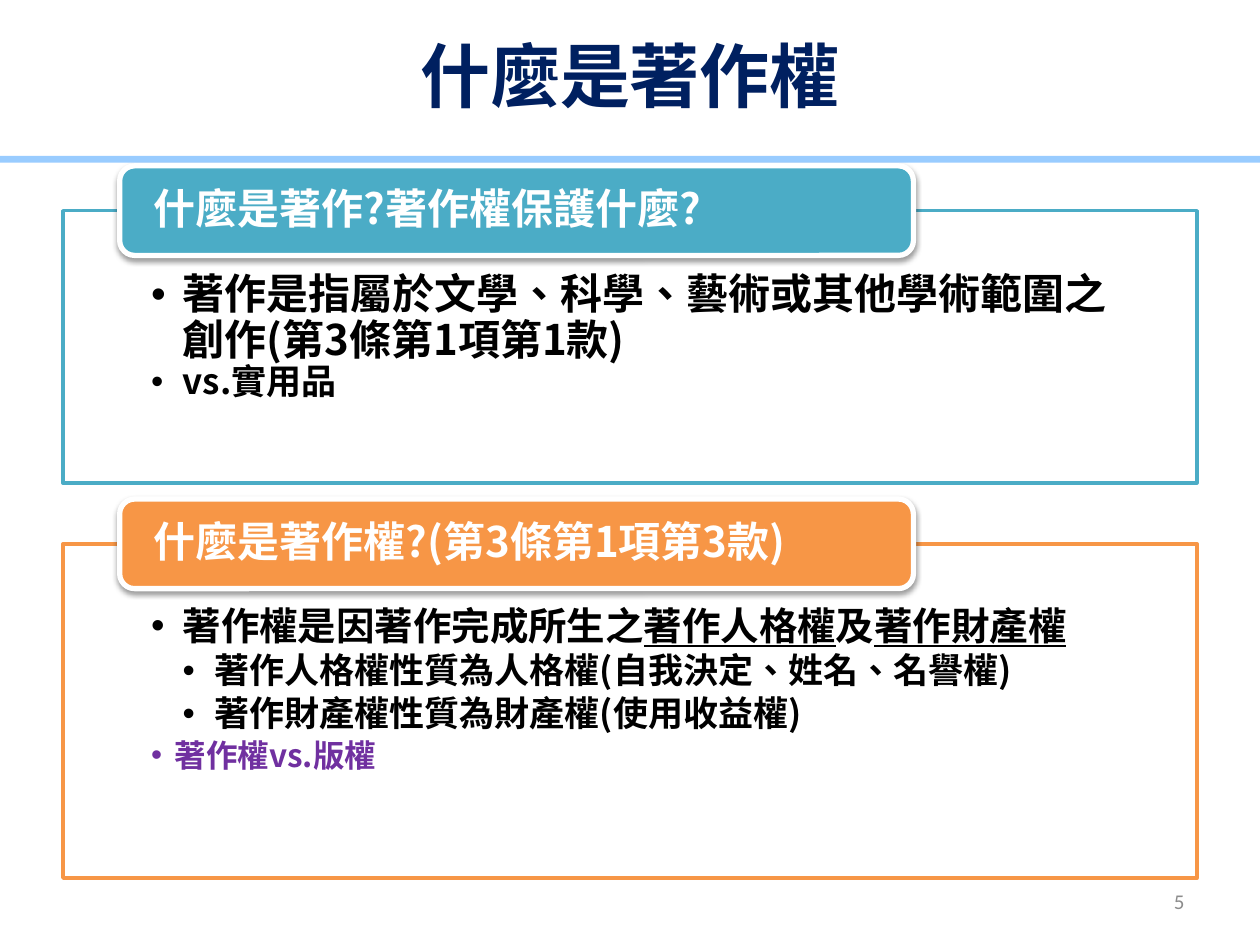
from dataclasses import dataclass

import lxml.etree
import pptx
import pptx.dml.color
import pptx.enum.shapes
import pptx.enum.text
import pptx.oxml
import pptx.oxml.ns
import pptx.util

Pt = pptx.util.Pt
qn = pptx.oxml.ns.qn
Shapes = pptx.enum.shapes.MSO_SHAPE
Anchor = pptx.enum.text.MSO_ANCHOR
Align = pptx.enum.text.PP_ALIGN


@dataclass(frozen=True)
class Theme:
    font: str = "Noto Sans CJK SC"
    number_font: str = "Calibri"
    bullet_font: str = "Arial"
    language: str = "zh-TW"
    navy: str = "002060"
    rule: str = "99CCFF"
    teal: str = "4BACC6"
    orange: str = "F79646"
    purple: str = "7030A0"
    black: str = "000000"
    white: str = "FFFFFF"
    gray: str = "8C8C8C"
    title_size: int = 40
    heading_size: int = 24
    number_size: int = 12


THEME = Theme()


@dataclass(frozen=True)
class Bullet:
    runs: tuple
    size: int
    level: int = 1
    margin: float = 18
    hanging: float = 18
    color: str = THEME.black


def rgb(value):
    return pptx.dml.color.RGBColor.from_string(value)


def style_run(run, size, color, font=THEME.font, bold=True):
    run.font.size = Pt(size)
    run.font.bold = bold
    run.font.name = font
    run.font.color.rgb = rgb(color)
    properties = run._r.get_or_add_rPr()
    properties.set("lang", THEME.language)
    lxml.etree.SubElement(properties, qn("a:ea")).set("typeface", font)


def set_frame(shape, anchor, insets):
    text_frame = shape.text_frame
    text_frame.word_wrap = True
    text_frame.vertical_anchor = anchor
    (text_frame.margin_left, text_frame.margin_top,
     text_frame.margin_right, text_frame.margin_bottom) = map(Pt, insets)
    return text_frame


def add_box(slide, kind, box, fill, line=None, width=0):
    shape = slide.shapes.add_shape(kind, *map(Pt, box))
    shape.shadow.inherit = False
    shape.fill.solid()
    shape.fill.fore_color.rgb = rgb(fill)
    if line:
        shape.line.color.rgb = rgb(line)
        shape.line.width = Pt(width)
    else:
        shape.line.fill.background()
    return shape


def add_label(slide, box, text, size, color, anchor, align, font=THEME.font, bold=True):
    shape = slide.shapes.add_textbox(*map(Pt, box))
    text_frame = set_frame(shape, anchor, (7.2, 3.6, 7.2, 3.6))
    text_frame.text = text
    paragraph = text_frame.paragraphs[0]
    paragraph.alignment = align
    style_run(paragraph.runs[0], size, color, font, bold)


def add_soft_shadow(shape):
    effects = shape._element.spPr.find(qn("a:effectLst"))
    effects.append(pptx.oxml.parse_xml(
        f'<a:outerShdw {pptx.oxml.ns.nsdecls("a")} '
        f'blurRad="{Pt(3.1)}" dist="{Pt(1.6)}" dir="5400000" rotWithShape="0">'
        f'<a:srgbClr val="{THEME.black}"><a:alpha val="38000"/></a:srgbClr>'
        '</a:outerShdw>'))


def add_bullet(paragraph, bullet, space_after):
    paragraph.level = bullet.level
    paragraph.alignment = Align.LEFT
    paragraph.line_spacing = 0.9
    paragraph.space_before = Pt(0)
    paragraph.space_after = Pt(space_after)
    properties = paragraph._p.get_or_add_pPr()
    properties.set("marL", str(Pt(bullet.margin)))
    properties.set("indent", str(-Pt(bullet.hanging)))
    lxml.etree.SubElement(properties, qn("a:buFont")).set("typeface", THEME.bullet_font)
    lxml.etree.SubElement(properties, qn("a:buChar")).set("char", "•")
    for text, underline in bullet.runs:
        run = paragraph.add_run()
        run.text = text
        style_run(run, bullet.size, bullet.color)
        run.font.underline = underline


def add_section(slide, box, color, heading, bullets, space_after):
    left, top, width, height = box
    panel = add_box(slide, Shapes.RECTANGLE, box, THEME.white, color, 2)
    text_frame = set_frame(panel, Anchor.TOP, (50.4, 36, 50.4, 13))
    for index, bullet in enumerate(bullets):
        paragraph = text_frame.add_paragraph() if index else text_frame.paragraphs[0]
        add_bullet(paragraph, bullet, space_after)

    tab = add_box(slide, Shapes.ROUNDED_RECTANGLE,
                  (left + 32.4, top - 25.6, width * 0.7, 51.2),
                  color, THEME.white, 3)
    add_soft_shadow(tab)
    text_frame = set_frame(tab, Anchor.MIDDLE, (17, 0, 4, 0))
    text_frame.text = heading
    paragraph = text_frame.paragraphs[0]
    paragraph.alignment = Align.LEFT
    paragraph.line_spacing = 0.9
    paragraph.space_after = Pt(8.4)
    style_run(paragraph.runs[0], THEME.heading_size, THEME.white)


def add_header(slide, box, title):
    left, top, width, height = box
    add_box(slide, Shapes.RECTANGLE, (-3, top + height - 1, 724.5, 4), THEME.rule)
    add_label(slide, box, title, THEME.title_size, THEME.navy, Anchor.TOP, Align.CENTER)


def add_page_number(slide, box, number):
    add_label(slide, box, number, THEME.number_size, THEME.gray, Anchor.MIDDLE,
              Align.RIGHT, THEME.number_font, False)


def main():
    presentation = pptx.Presentation()
    presentation.slide_width, presentation.slide_height = Pt(720), Pt(540)
    slide = presentation.slides.add_slide(presentation.slide_layouts[6])

    add_header(slide, (36, 15, 648, 75), "什麼是著作權")
    add_section(slide, (36, 120.4, 648, 155.6), THEME.teal, "什麼是著作?著作權保護什麼?", [
        Bullet((("著作是指屬於文學、科學、藝術或其他學術範圍之創作(第3條第1項第1款)", False),), 24),
        Bullet((("vs.實用品", False),), 20),
    ], 0)
    add_section(slide, (36, 310.8, 648, 191), THEME.orange, "什麼是著作權?(第3條第1項第3款)", [
        Bullet((("著作權是因著作完成所生之", False), ("著作人格權", True),
                ("及", False), ("著作財產權", True)), 22),
        Bullet((("著作人格權性質為人格權(自我決定、姓名、名譽權)", False),), 20, 2, 36),
        Bullet((("著作財產權性質為財產權(使用收益權)", False),), 20, 2, 36),
        Bullet((("著作權vs.版權", False),), 18, 1, 13.5, 13.5, THEME.purple),
    ], 3)
    add_page_number(slide, (516, 500.5, 168, 28.8), "5")
    presentation.save("out.pptx")


if __name__ == "__main__":
    main()
